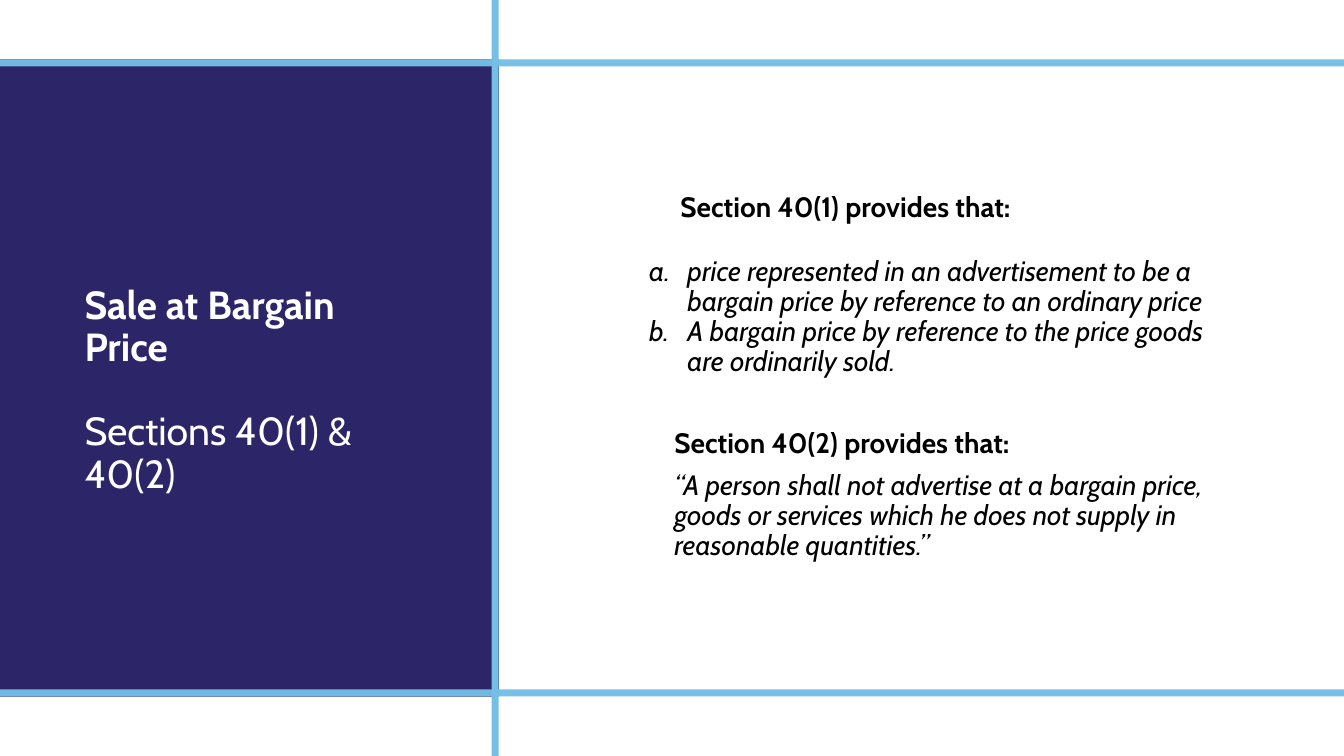
from dataclasses import dataclass

from lxml import etree
from pptx import Presentation, util as u
from pptx.dml.color import RGBColor
from pptx.enum import shapes, text
from pptx.oxml import ns


@dataclass(frozen=True)
class Theme:
    """Colours, font and type sizes of the slide."""
    panel: str = "2C2669"
    rule: str = "75BEE6"
    title: str = "FFFFFF"
    body: str = "000000"
    font: str = "Cabin"
    title_size: int = 28
    body_size: int = 20
    line_spacing: float = 0.9


@dataclass(frozen=True)
class Box:
    """A rectangle in slide units."""
    left: int
    top: int
    width: int
    height: int

    def inner(self, left, top, width, height):
        """Return an inner box given in percent of this one."""
        return Box(int(self.left + self.width * left / 100),
                   int(self.top + self.height * top / 100),
                   int(self.width * width / 100),
                   int(self.height * height / 100))

    def bounds(self):
        """Return the position and size as python-pptx takes them."""
        return self.left, self.top, self.width, self.height


THEME = Theme()


def add_block(slide, box, colour, opacity=100):
    """Draw a plain filled rectangle."""
    block = slide.shapes.add_shape(shapes.MSO_SHAPE.RECTANGLE, *box.bounds())
    block.shadow.inherit = False
    block.line.fill.background()
    block.fill.solid()
    block.fill.fore_color.rgb = RGBColor.from_string(colour)
    if opacity < 100:
        fill_colour = block.element.spPr.find(ns.qn("a:solidFill")).find(ns.qn("a:srgbClr"))
        etree.SubElement(fill_colour, ns.qn("a:alpha"), val=str(opacity * 1000))


def add_text_frame(slide, box, anchor):
    """Add a wrapping text box and return its frame."""
    frame = slide.shapes.add_textbox(*box.bounds()).text_frame
    frame.word_wrap = True
    frame.vertical_anchor = anchor
    return frame


def add_paragraph(frame, words, size, colour, bold=False, italic=False,
                  before=0, after=0, indent=0, lettered=False):
    """Append one formatted paragraph, lettered if asked."""
    first = frame.paragraphs[0]
    paragraph = frame.add_paragraph() if first.text else first
    paragraph.text = words
    paragraph.line_spacing = THEME.line_spacing
    paragraph.space_before, paragraph.space_after = u.Pt(before), u.Pt(after)
    properties = paragraph._p.get_or_add_pPr()
    properties.set("marL", str(u.Inches(indent)))
    properties.set("indent", str(u.Inches(-indent if lettered else 0)))
    if lettered:
        etree.SubElement(properties, ns.qn("a:buFont"), typeface=THEME.font)
        etree.SubElement(properties, ns.qn("a:buAutoNum"), type="alphaLcPeriod")
    for run in paragraph.runs:
        run.font.name, run.font.size = THEME.font, u.Pt(size)
        run.font.bold, run.font.italic = bold, italic
        run.font.color.rgb = RGBColor.from_string(colour)


def add_title_panel(slide, box):
    """Draw the dark panel with the title and its sections."""
    add_block(slide, box, THEME.panel)
    frame = add_text_frame(slide, box.inner(14.95, 34.65, 68.48, 49.37),
                           text.MSO_ANCHOR.TOP)
    add_paragraph(frame, "Sale at Bargain Price", THEME.title_size, THEME.title, bold=True)
    add_paragraph(frame, "Sections 40(1) & 40(2)", THEME.title_size, THEME.title, before=30)


def add_provisions(slide, box):
    """Write what the two sections provide."""
    frame = add_text_frame(slide, box, text.MSO_ANCHOR.MIDDLE)
    heading, item, quote = {"bold": True}, {"italic": True, "lettered": True}, {"italic": True}
    provisions = [
        ("Section 40(1) provides that:", heading, 0.31, 24),
        ("price represented in an advertisement to be a bargain price "
         "by reference to an ordinary price", item, 0.38, 0),
        ("A bargain price by reference to the price goods are ordinarily sold.",
         item, 0.38, 37),
        ("Section 40(2) provides that:", heading, 0.25, 8),
        ("“A person shall not advertise at a bargain price, goods or services "
         "which he does not supply in reasonable quantities.”", quote, 0.25, 0),
    ]
    for words, style, indent, after in provisions:
        add_paragraph(frame, words, THEME.body_size, THEME.body,
                      indent=indent, after=after, **style)


def add_rules(slide, box):
    """Draw the two horizontal rules and the vertical one."""
    for top in (7.87, 91.2):
        add_block(slide, box.inner(0, top, 100, 0.93), THEME.rule, opacity=97)
    add_block(slide, box.inner(36.57, 0, 0.53, 100), THEME.rule)


def main():
    """Build and save the slide."""
    presentation = Presentation()
    presentation.slide_width, presentation.slide_height = u.Inches(13.33), u.Inches(7.5)
    slide = presentation.slides.add_slide(presentation.slide_layouts[6])
    page = Box(0, 0, presentation.slide_width, presentation.slide_height)
    add_title_panel(slide, page.inner(0, 7.87, 37.13, 84.27))
    add_provisions(slide, page.inner(47.56, 21.2, 43.81, 57.47))
    add_rules(slide, page)
    presentation.save("out.pptx")


if __name__ == "__main__":
    main()
